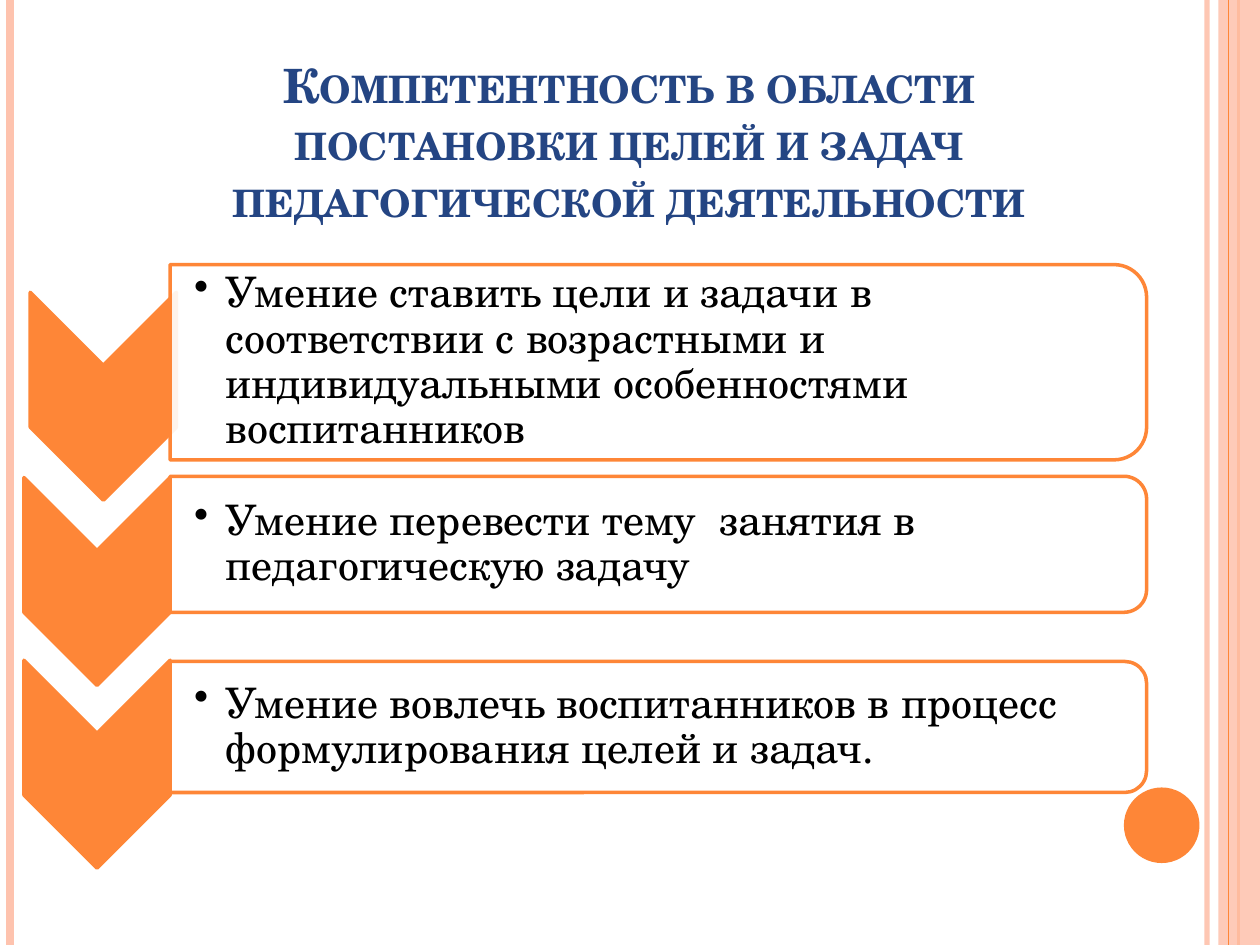
from pptx import Presentation
from pptx.dml.color import RGBColor
from pptx.enum import shapes, text
from pptx.oxml import ns, xmlchemy
from pptx.util import Inches, Pt

FONT = "TeX Gyre Schola"
ORANGE, PEACH, WHITE, BLACK, BLUE = "FE8637", "FEC3AE", "FFFFFF", "000000", "244583"
CHEVRON_LENGTH, CHEVRON_WIDTH = 1.65, 1.16
CARD_LEFT, CARD_WIDTH = 1.35, 7.75
TITLE = "Компетентность в области постановки целей и задач педагогической деятельности"
SKILLS = [
    ("Умение ставить цели и задачи в соответствии с возрастными и индивидуальными "
     "особенностями воспитанников", 2.1, 1.55, 0.24, 2.32),
    ("Умение перевести тему  занятия в педагогическую задачу", 3.78, 1.08, 0.19, 3.79),
    ("Умение вовлечь воспитанников в процесс формулирования целей и задач.",
     5.25, 1.04, 0.19, 5.24),
]


def rgb(value):
    """Turn a hex string into a colour."""
    return RGBColor.from_string(value)


def add_child(parent, tag, **attributes):
    """Append a DrawingML element and return it."""
    child = xmlchemy.OxmlElement(tag)
    for key, value in attributes.items():
        child.set(key, value)
    parent.append(child)
    return child


def set_opacity(fill, percent):
    """Make a solid fill partly transparent."""
    colour = fill._xPr.find(ns.qn("a:solidFill"))[0]
    add_child(colour, "a:alpha", val=str(percent * 1000))


def add_block(slide, kind, left, top, width, height, fill, line=None, opacity=100):
    """Add a filled preset shape."""
    block = slide.shapes.add_shape(
        kind, Inches(left), Inches(top), Inches(width), Inches(height))
    block.shadow.inherit = False
    block.fill.solid()
    block.fill.fore_color.rgb = rgb(fill)
    if opacity < 100:
        set_opacity(block.fill, opacity)
    if line:
        block.line.color.rgb = rgb(line)
        block.line.width = Pt(2)
    else:
        block.line.fill.background()
    return block


def add_turned(slide, kind, left, top, width, height, fill, opacity=100):
    """Fit a shape turned by a quarter into the visible box."""
    block = add_block(slide, kind, left + (width - height) / 2,
                      top + (height - width) / 2, height, width, fill, ORANGE, opacity)
    block.rotation = 90
    return block


def add_stripe(slide, x, height, colour, weight, opacity=100):
    """Draw a vertical line from the top of the slide."""
    stripe = slide.shapes.add_connector(
        shapes.MSO_CONNECTOR.STRAIGHT, Inches(x), 0, Inches(x), Inches(height))
    stripe.line.color.rgb = rgb(colour)
    stripe.line.width = Pt(weight)
    if opacity < 100:
        set_opacity(stripe.line.fill, opacity)
    add_child(stripe._element.spPr, "a:effectLst")


def add_frame(slide, width, height):
    """Draw the side stripes, the right band and the corner disc."""
    add_stripe(slide, width - 0.42, height, PEACH, 3, 93)
    add_stripe(slide, 0.08, height, PEACH, 4.5)
    add_stripe(slide, width - 0.17, height, ORANGE, 1.5)
    add_block(slide, shapes.MSO_SHAPE.RECTANGLE, width - 0.33, 0, 0.33, height,
              PEACH, opacity=87)
    add_stripe(slide, width - 0.25, height, ORANGE, 0.75)
    add_block(slide, shapes.MSO_SHAPE.OVAL, width - 1.08, height - 1.25, 0.6, 0.6, ORANGE)


def add_title(slide, left, top, width, height):
    """Place the small-caps title in its placeholder."""
    title = slide.shapes.title
    title.left, title.top = Inches(left), Inches(top)
    title.width, title.height = Inches(width), Inches(height)
    frame = title.text_frame
    frame.text = TITLE
    frame.word_wrap = True
    frame.auto_size = text.MSO_AUTO_SIZE.NONE
    frame.vertical_anchor = text.MSO_ANCHOR.BOTTOM
    heading = frame.paragraphs[0]
    heading.alignment = text.PP_ALIGN.CENTER
    heading.line_spacing = 1.0
    heading.space_before = Pt(0)
    font = heading.runs[0].font
    font.name, font.size, font.bold = FONT, Pt(27), True
    font.color.rgb = rgb(BLUE)
    font._element.set("cap", "small")


def add_skill_text(slide, skill, left, top, width, height):
    """Write one bulleted skill, centred vertically in its box."""
    box = slide.shapes.add_textbox(
        Inches(left), Inches(top), Inches(width), Inches(height))
    frame = box.text_frame
    frame.word_wrap = True
    frame.vertical_anchor = text.MSO_ANCHOR.MIDDLE
    frame.margin_left = Inches(0.19)
    frame.margin_top = frame.margin_right = frame.margin_bottom = Inches(0.02)
    item = frame.paragraphs[0]
    item.text = skill
    item.level = 1
    item.line_spacing = 0.9
    item.space_after = Pt(4)
    item.font.name, item.font.size = FONT, Pt(24)
    item.font.color.rgb = rgb(BLACK)
    properties = item._p.get_or_add_pPr()
    properties.set("marL", str(Inches(0.25)))
    properties.set("indent", str(-Inches(0.25)))
    bullet = xmlchemy.OxmlElement("a:buChar")
    bullet.set("char", "•")
    properties.find(ns.qn("a:defRPr")).addprevious(bullet)


def add_skill(slide, skill, top, height, chevron_left, chevron_top):
    """Add one step: its chevron, its card and its text."""
    add_turned(slide, shapes.MSO_SHAPE.CHEVRON, chevron_left, chevron_top,
               CHEVRON_WIDTH, CHEVRON_LENGTH, ORANGE)
    add_turned(slide, shapes.MSO_SHAPE.ROUND_2_SAME_RECTANGLE, CARD_LEFT, top,
               CARD_WIDTH, height, WHITE, 90)
    inset = 0.05 * height
    add_skill_text(slide, skill, CARD_LEFT, top + inset,
                   CARD_WIDTH - inset, height - 2 * inset)


def main():
    """Build and save the slide."""
    deck = Presentation()
    deck.slide_width, deck.slide_height = Inches(10), Inches(7.5)
    slide = deck.slides.add_slide(deck.slide_layouts[5])
    slide.background.fill.solid()
    slide.background.fill.fore_color.rgb = rgb(WHITE)
    add_frame(slide, 10, 7.5)
    add_title(slide, 0.91, 0.6, 8.17, 1.25)
    for skill in SKILLS:
        add_skill(slide, *skill)
    deck.save("out.pptx")


if __name__ == "__main__":
    main()
